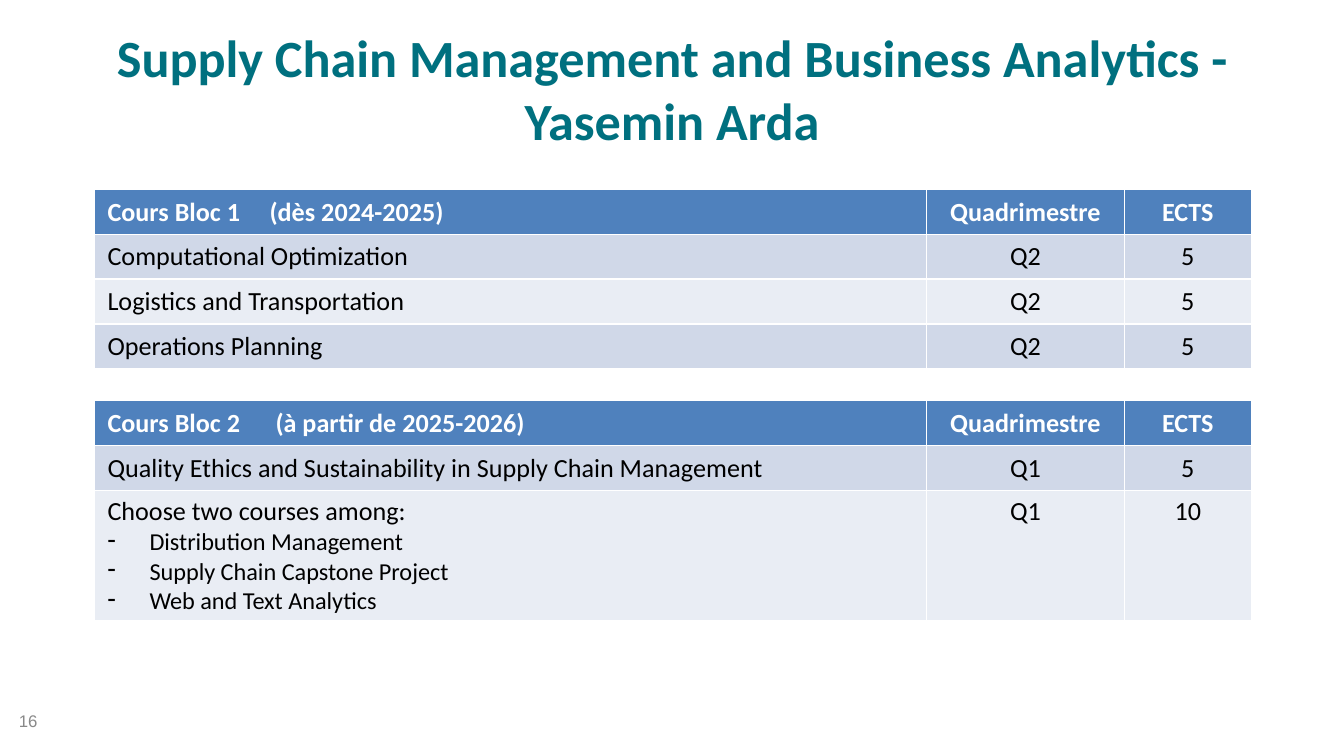
from dataclasses import dataclass

from lxml.etree import SubElement
from pptx import Presentation
from pptx.dml.color import RGBColor as Rgb
from pptx.enum.text import MSO_ANCHOR as Anchor, PP_ALIGN as Align
from pptx.oxml.ns import qn
from pptx.util import Pt


@dataclass(frozen=True)
class Theme:
    title: Rgb = Rgb(0x00, 0x70, 0x7F)
    header: Rgb = Rgb(0x4F, 0x81, 0xBD)
    bands: tuple = (Rgb(0xD0, 0xD8, 0xE8), Rgb(0xE9, 0xED, 0xF4))
    white: Rgb = Rgb(0xFF, 0xFF, 0xFF)
    black: Rgb = Rgb(0, 0, 0)
    muted: Rgb = Rgb(0x89, 0x89, 0x89)
    font: str = "Calibri"
    number_font: str = "Arial"
    title_size: float = 28
    body_size: float = 14
    option_size: float = 13
    number_size: float = 9


THEME = Theme()
COLUMN_WIDTHS = (446, 106, 68)
ROW_HEIGHT = 24
OPTION_INDENT = 22.5


def set_font(paragraph, size, color, bold=False, name=THEME.font):
    font = paragraph.font
    font.name, font.size, font.bold = name, Pt(size), bold
    font.color.rgb = color


def add_label(slide, box, text, size, color, anchor, align, **font):
    shape = slide.shapes.add_textbox(*map(Pt, box))
    frame = shape.text_frame
    frame.word_wrap = True
    frame.vertical_anchor = anchor
    paragraph = frame.paragraphs[0]
    paragraph.text = text
    paragraph.alignment = align
    set_font(paragraph, size, color, **font)


def add_tab_stop(paragraph, position):
    tabs = SubElement(paragraph._p.get_or_add_pPr(), qn("a:tabLst"))
    SubElement(tabs, qn("a:tab"), pos=str(Pt(position)), algn="l")


def add_dash(paragraph):
    properties = paragraph._p.get_or_add_pPr()
    properties.set("marL", str(Pt(OPTION_INDENT)))
    properties.set("indent", str(-Pt(OPTION_INDENT)))
    SubElement(properties, qn("a:buChar"), char="-")


def add_course_table(slide, box, block, period, period_offset, courses):
    """Place a course table; the first line of a course is its name, the rest are options."""
    rows = [(f"{block}\t{period}", "Quadrimestre", "ECTS"), *courses]
    shape = slide.shapes.add_table(len(rows), len(COLUMN_WIDTHS), *map(Pt, box))
    table = shape.table
    for column, width in zip(table.columns, COLUMN_WIDTHS):
        column.width = Pt(width)
    for row in table.rows:
        row.height = Pt(ROW_HEIGHT)

    for row_index, values in enumerate(rows):
        is_header = row_index == 0
        fill = THEME.header if is_header else THEME.bands[(row_index - 1) % 2]
        color = THEME.white if is_header else THEME.black
        for column_index, text in enumerate(values):
            cell = table.cell(row_index, column_index)
            cell.fill.solid()
            cell.fill.fore_color.rgb = fill
            if "\n" in values[0]:
                cell.margin_top = cell.margin_bottom = Pt(3)
            cell.text = text
            for line, paragraph in enumerate(cell.text_frame.paragraphs):
                if is_header and column_index == 0:
                    add_tab_stop(paragraph, period_offset)
                if line:
                    add_dash(paragraph)
                paragraph.alignment = Align.CENTER if column_index else Align.LEFT
                size = THEME.option_size if line else THEME.body_size
                set_font(paragraph, size, color, bold=is_header)


def build_slide(presentation):
    slide = presentation.slides.add_slide(presentation.slide_layouts[6])

    # Page number
    add_label(slide, (3, 375, 168, 22), "16", THEME.number_size, THEME.muted,
              Anchor.MIDDLE, Align.LEFT, name=THEME.number_font)

    # Title
    add_label(slide, (36, 10, 648, 45),
              "Supply Chain Management and Business Analytics - Yasemin Arda",
              THEME.title_size, THEME.title, Anchor.TOP, Align.CENTER, bold=True)

    # Courses of the two blocks
    left, width = 50.4, sum(COLUMN_WIDTHS)
    add_course_table(slide, (left, 101.5, width, 96),
                     "Cours Bloc 1", "(dès 2024-2025)", 86.8, [
        ("Computational Optimization", "Q2", "5"),
        ("Logistics and Transportation", "Q2", "5"),
        ("Operations Planning", "Q2", "5"),
    ])
    options = ("Choose two courses among:", "Distribution Management",
               "Supply Chain Capstone Project", "Web and Text Analytics")
    add_course_table(slide, (left, 214.6, width, 118),
                     "Cours Bloc 2", "(à partir de 2025-2026)", 90, [
        ("Quality Ethics and Sustainability in Supply Chain Management", "Q1", "5"),
        ("\n".join(options), "Q1", "10"),
    ])


def main():
    presentation = Presentation()
    presentation.slide_width, presentation.slide_height = Pt(720), Pt(405)
    build_slide(presentation)
    presentation.save("out.pptx")


if __name__ == "__main__":
    main()
